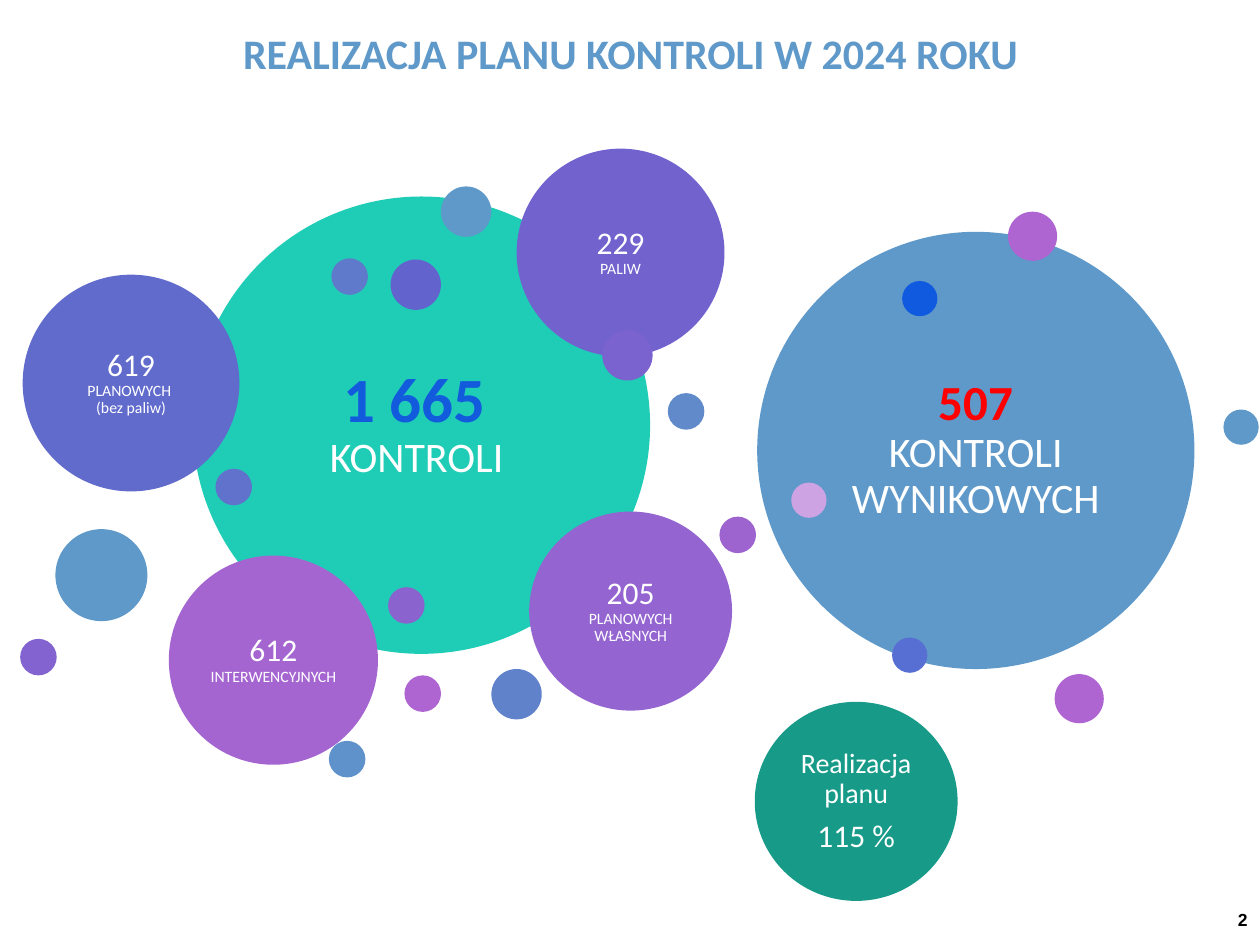
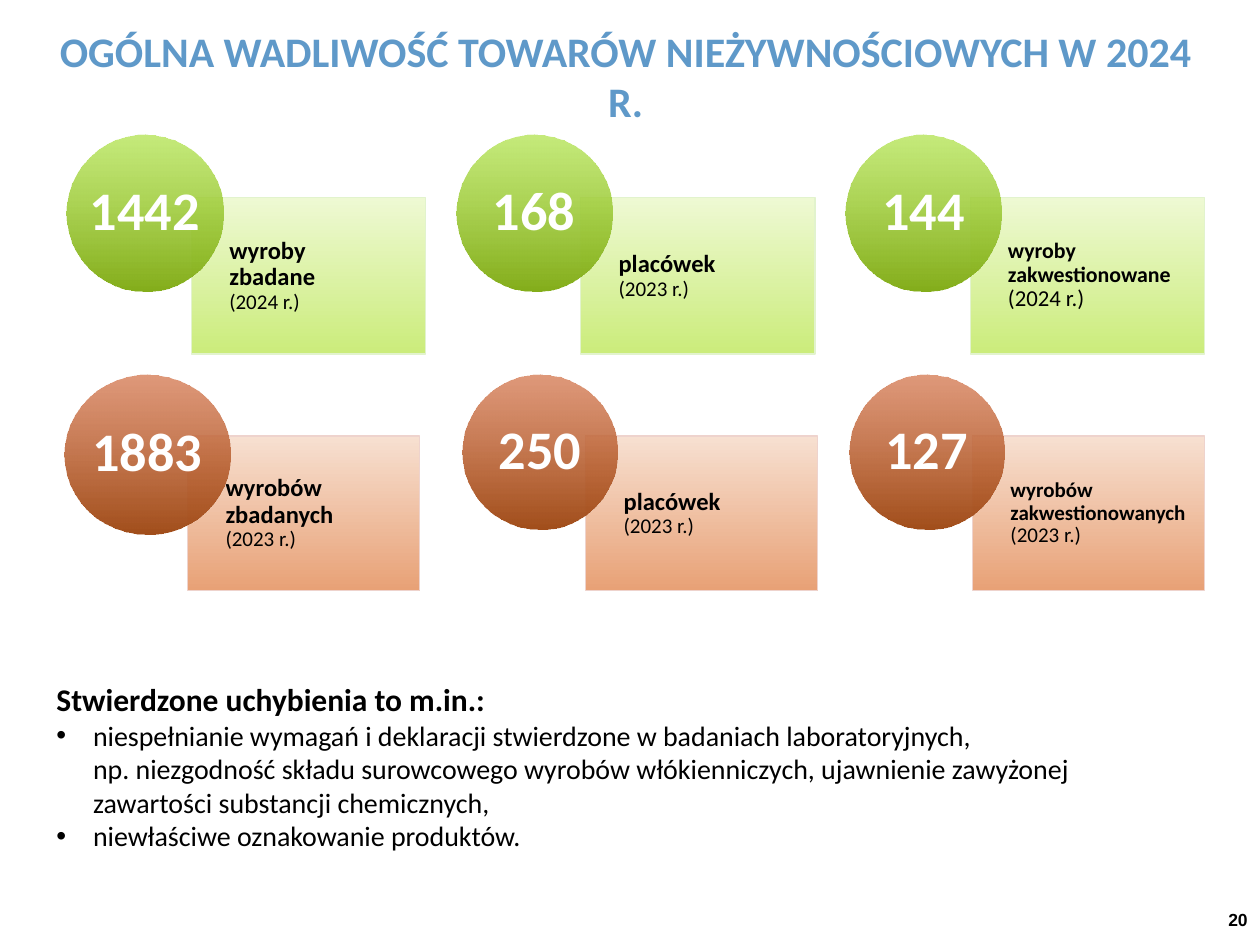
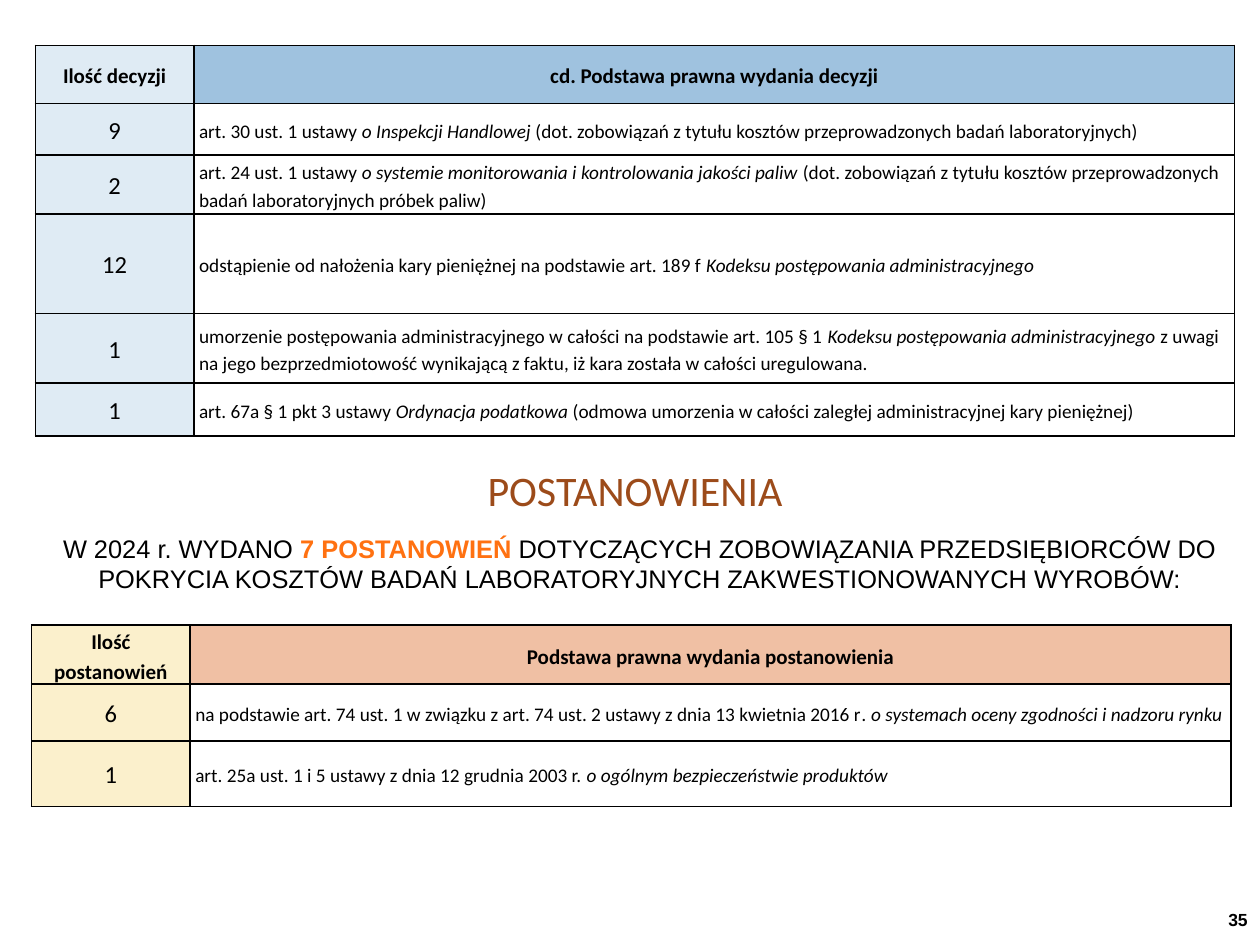
from copy import deepcopy
from dataclasses import dataclass

from lxml import etree
from pptx import Presentation
from pptx import util as u
from pptx.dml.color import RGBColor
from pptx.enum import shapes, text
from pptx.oxml.ns import qn


class Theme:
    font, plain_font = "Calibri", "Arial"
    black, white, red = "000000", "FFFFFF", "FF0000"
    blue, royal, teal, green = "5F99C9", "135BDD", "1FCDB6", "179A88"
    rust, orange, pink = "9C4B1A", "FF7111", "AE65D1"
    lime = dict(card=("EEF9D3", "CBEC7B"), line="E2F3CD", badge=("B2E34F", "84AE1B"))
    copper = dict(card=("F7E0D1", "E8A176"), line="EED3CD", badge=("D4774E", "A24E1B"))
    sky = dict(count="DFEBF4", head="9FC2DF")
    sand = dict(count="FBF0CC", head="F0C0A4")
    title, badge, big, medium = 24, 31, 36, 28
    heading, body, lead, count = 18, 16, 14.5, 14
    head, cell, page, small = 12, 11, 10, 9


@dataclass
class Run:
    text: str
    size: float
    color: str = Theme.black
    bold: bool = False
    italic: bool = False
    font: str = Theme.font


LEFT, CENTER, RIGHT, JUSTIFY = (text.PP_ALIGN.LEFT, text.PP_ALIGN.CENTER,
                                text.PP_ALIGN.RIGHT, text.PP_ALIGN.JUSTIFY)
MIDDLE = text.MSO_ANCHOR.MIDDLE


# ---- Content ----

def figure(number, label):
    return [[Run(number + "\n", Theme.heading, Theme.white),
             Run(label, Theme.small, Theme.white)]]


PLAN_TITLE = "REALIZACJA PLANU KONTROLI W 2024 ROKU"

# left, top, width, height, colour, paragraphs, inset
BIG_CIRCLES = {
    "realised": (5.99, 5.57, 1.61, 1.58, Theme.green,
                 [[Run("Realizacja planu", Theme.body, Theme.white)],
                  [Run("115 %", Theme.heading, Theme.white)]], 0.07),
    "inspections": (1.53, 1.56, 3.63, 3.63, Theme.teal,
                    [[Run("1 665 \n", Theme.big, Theme.royal, True),
                      Run("KONTROLI ", Theme.title, Theme.white)]], 0.15),
    "planned": (0.18, 2.18, 1.72, 1.72, "616BCC",
                figure("619", "PLANOWYCH \n(bez paliw)"), 0.07),
    "fuel": (4.1, 1.18, 1.65, 1.65, "7162CE", figure("229", "PALIW"), 0.07),
    "own": (4.2, 4.06, 1.61, 1.58, "9464D0",
            figure("205", "PLANOWYCH WŁASNYCH"), 0.07),
    "intervention": (1.34, 4.41, 1.66, 1.66, "A565D1",
                     figure("612", "INTERWENCYJNYCH"), 0.07),
    "follow_up": (6.01, 1.84, 3.47, 3.47, Theme.blue,
                  [[Run("507\n", Theme.medium, Theme.red, True),
                    Run("KONTROLI WYNIKOWYCH", Theme.title, Theme.white)]], 0.1),
}

# left, top, diameter, colour
DOTS = [
    (3.5, 1.48, 0.4, Theme.blue), (2.61, 5.88, 0.29, "5F91CA"),
    (5.3, 3.12, 0.29, "608ACA"), (3.9, 5.31, 0.4, "6082CB"),
    (2.63, 2.05, 0.29, "607ACB"), (1.71, 3.72, 0.29, "6172CC"),
    (3.1, 2.06, 0.4, "6263CD"), (0.44, 4.2, 0.73, Theme.blue),
    (4.78, 2.62, 0.4, "7A63CE"), (0.16, 5.07, 0.29, "8363CF"),
    (3.08, 4.66, 0.29, "8B63CF"), (5.71, 4.1, 0.29, "9D64D0"),
    (3.21, 5.36, 0.29, Theme.pink), (8, 1.68, 0.39, Theme.pink),
    (7.08, 5.06, 0.28, "576ED2"), (9.71, 3.25, 0.28, Theme.blue),
    (8.37, 5.35, 0.39, Theme.pink), (7.16, 2.23, 0.28, "105AE0"),
    (6.28, 3.83, 0.28, "CEA3E3"),
]

DEFECT_TITLE = "OGÓLNA WADLIWOŚĆ TOWARÓW NIEŻYWNOŚCIOWYCH W 2024 R."

# badge left, badge size, number, label, label size, note, note size
CARD_ROWS = [
    (1.07, 1.24, Theme.lime, [
        (0.53, (1.24, 1.24), "1442", "wyroby\nzbadane", 14, "(2024 r.)", 12),
        (3.62, (1.24, 1.24), "168", "placówek", 14, "(2023 r.)", 12),
        (6.71, (1.24, 1.24), "144", "wyroby zakwestionowane", 12.5, "(2024 r.)", 13)]),
    (2.97, 1.23, Theme.copper, [
        (0.51, (1.32, 1.27), "1883", "wyrobów\nzbadanych", 14, "(2023 r.)", 12),
        (3.67, (1.23, 1.23), "250", "placówek", 14, "(2023 r.)", 12),
        (6.74, (1.23, 1.23), "127", "wyrobów zakwestionowanych", 12, "(2023 r.)", 12)]),
]

FAULTS_HEAD = "Stwierdzone uchybienia to m.in.:"
FAULTS = [
    "niespełnianie wymagań i deklaracji stwierdzone w badaniach laboratoryjnych, \n"
    "np. niezgodność składu surowcowego wyrobów włókienniczych, ujawnienie "
    "zawyżonej zawartości substancji chemicznych,",
    "niewłaściwe oznakowanie produktów.",
]

# Row height, count, legal basis: every second part is italic
DECISIONS_HEAD = (0.46, "Ilość decyzji", "cd. Podstawa prawna wydania decyzji")
DECISIONS = [
    (0.41, "9", ["art. 30 ust. 1 ustawy ", "o Inspekcji Handlowej ",
                 "(dot. zobowiązań z tytułu kosztów przeprowadzonych badań "
                 "laboratoryjnych)"]),
    (0.47, "2", ["art. 24 ust. 1 ustawy ",
                 "o systemie monitorowania i kontrolowania jakości paliw ",
                 "(dot. zobowiązań z tytułu kosztów przeprowadzonych badań "
                 "laboratoryjnych próbek paliw)"]),
    (0.79, "12", ["odstąpienie od nałożenia kary pieniężnej na podstawie art. 189 f ",
                  "Kodeksu postępowania administracyjnego"]),
    (0.55, "1", ["umorzenie postępowania administracyjnego w całości na podstawie "
                 "art. 105 § 1 ", "Kodeksu postępowania administracyjnego ",
                 "z uwagi na jego bezprzedmiotowość wynikającą z faktu, iż kara "
                 "została w całości uregulowana."]),
    (0.42, "1", ["art. 67a § 1 pkt 3 ustawy ", "Ordynacja podatkowa ",
                 "(odmowa umorzenia w całości zaległej administracyjnej kary "
                 "pieniężnej)"]),
]

RULINGS_TITLE = "POSTANOWIENIA"
RULINGS_LEAD = [
    Run("W 2024 r. WYDANO ", Theme.lead, font=Theme.plain_font),
    Run("7 POSTANOWIEŃ ", Theme.lead, Theme.orange, True, font=Theme.plain_font),
    Run("DOTYCZĄCYCH ZOBOWIĄZANIA PRZEDSIĘBIORCÓW DO POKRYCIA KOSZTÓW BADAŃ "
        "LABORATORYJNYCH ZAKWESTIONOWANYCH WYROBÓW:", Theme.lead,
        font=Theme.plain_font),
]
RULINGS_HEAD = (0.47, "Ilość postanowień", "Podstawa prawna wydania postanowienia")
RULINGS = [
    (0.45, "6", ["na podstawie art. 74 ust. 1 w związku z art. 74 ust. 2 ustawy "
                 "z dnia 13 kwietnia 2016 r",
                 ". o systemach oceny zgodności i nadzoru rynku"]),
    (0.52, "1", ["art. 25a ust. 1 i 5 ustawy z dnia 12 grudnia 2003 r. ",
                 "o ogólnym bezpieczeństwie produktów"]),
]


# ---- Text and shape helpers ----

def inches(*values):
    return [u.Inches(round(value, 2)) for value in values]


def rgb(color):
    return RGBColor.from_string(color)


def add_run(para, run):
    """Add a run; a newline becomes a line break of the same size."""
    for index, part in enumerate(run.text.split("\n")):
        if index:
            para.add_line_break()
            para._p[-1].append(deepcopy(span._r.rPr))
        if not part:
            continue
        span = para.add_run()
        span.text = part
        font = span.font
        font.name, font.size, font.color.rgb = run.font, u.Pt(run.size), rgb(run.color)
        font.bold, font.italic = run.bold, run.italic


def write(frame, paragraphs, align=CENTER, spacing=None, gap=0):
    for index, runs in enumerate(paragraphs):
        para = frame.paragraphs[0] if index == 0 else frame.add_paragraph()
        para.alignment = align
        if spacing:
            para.line_spacing = spacing
        if index < len(paragraphs) - 1:
            para.space_after = u.Pt(gap)
        for run in runs:
            add_run(para, run)


def set_margins(target, left, top, right, bottom):
    (target.margin_left, target.margin_top,
     target.margin_right, target.margin_bottom) = inches(left, top, right, bottom)


def add_text(page, place, paragraphs, align=CENTER, anchor=text.MSO_ANCHOR.TOP):
    frame = page.shapes.add_textbox(*inches(*place)).text_frame
    frame.word_wrap = True
    frame.vertical_anchor = anchor
    write(frame, paragraphs, align)
    return frame


def set_alpha(color_node, percent):
    etree.SubElement(color_node, qn("a:alpha"), val=str(percent * 1000))


def add_filled(page, kind, place, colors, paragraphs=(), margins=(0, 0, 0, 0),
               align=CENTER):
    """Add a shape with one colour or a top-to-bottom pair of colours."""
    shape = page.shapes.add_shape(kind, *inches(*place))
    shape.shadow.inherit = False
    shape.line.fill.background()
    if isinstance(colors, str):
        shape.fill.solid()
        shape.fill.fore_color.rgb = rgb(colors)
    else:
        shape.fill.gradient()
        shape.fill.gradient_angle = 270
        for stop, color in zip(shape.fill.gradient_stops, colors):
            stop.color.rgb = rgb(color)
    frame = shape.text_frame
    frame.word_wrap = True
    frame.vertical_anchor = MIDDLE
    set_margins(frame, *margins)
    write(frame, paragraphs, align, 0.9, 6)
    return shape


def add_circle(page, place, colors, paragraphs=(), inset=0):
    return add_filled(page, shapes.MSO_SHAPE.OVAL, place, colors, paragraphs, [inset] * 4)


def add_title(page, place, words, color=Theme.blue, bold=True):
    add_text(page, place, [[Run(words, Theme.title, color, bold)]])


def new_page(deck, number):
    page = deck.slides.add_slide(deck.slide_layouts[6])
    add_text(page, (9.55, 7.1, 0.45, 0.4),
             [[Run(number, Theme.page, bold=True, font=Theme.plain_font)]],
             RIGHT, MIDDLE)
    return page


# ---- Cards, bullets and tables ----

def add_card(page, top, unit, colors, card):
    left, (badge_width, badge_height), number, label, label_size, note, note_size = card
    width = 1.5 * unit
    place = (left + 0.8 * unit, top + 0.4 * unit, width, unit)
    panel = add_filled(page, shapes.MSO_SHAPE.RECTANGLE, place, colors["card"],
                       [[Run(label + "\n", label_size, bold=True), Run(note, note_size)]],
                       (0.16 * width, 0.1, 0.1, 0.1), LEFT)
    panel.line.color.rgb = rgb(colors["line"])
    panel.line.width = u.Pt(0.75)
    badge = add_circle(page, (left, top, badge_width, badge_height), colors["badge"],
                       [[Run(number, Theme.badge, Theme.white, True)]])
    set_alpha(badge._element.spPr.find(".//" + qn("a:srgbClr")), 75)


def add_bullet(para):
    props = para._p.get_or_add_pPr()
    props.set("marL", str(u.Inches(0.29)))
    props.set("indent", str(-u.Inches(0.29)))
    etree.SubElement(props, qn("a:buFont"), typeface=Theme.plain_font)
    etree.SubElement(props, qn("a:buChar"), char="•")


def fill_cell(cell, runs, color=None, align=CENTER, spacing=1.15):
    cell.vertical_anchor = MIDDLE
    set_margins(cell, 0.04, 0.01, 0.04, 0)
    write(cell.text_frame, [runs], align, spacing)
    props = cell._tc.get_or_add_tcPr()
    for side in ("lnL", "lnR", "lnT", "lnB"):
        line = etree.SubElement(props, qn("a:" + side), w=str(u.Pt(1)))
        solid = etree.SubElement(line, qn("a:solidFill"))
        etree.SubElement(solid, qn("a:srgbClr"), val=Theme.black)
    if color:
        cell.fill.solid()
        cell.fill.fore_color.rgb = rgb(color)
    else:
        cell.fill.background()


def add_basis_table(page, left, top, head, rows, colors):
    widths = (1.26, 8.26)
    heights = [head[0]] + [row[0] for row in rows]
    table = page.shapes.add_table(len(heights), 2, *inches(
        left, top, sum(widths), sum(heights))).table
    table.first_row = table.horz_banding = False
    for column, width in zip(table.columns, widths):
        column.width = u.Inches(width)
    for row, height in zip(table.rows, heights):
        row.height = u.Inches(height)
    for index, color in enumerate((colors["count"], colors["head"])):
        fill_cell(table.cell(0, index), [Run(head[index + 1], Theme.head, bold=True)], color)
    for index, (_, count, parts) in enumerate(rows, 1):
        fill_cell(table.cell(index, 0), [Run(count, Theme.count)], colors["count"],
                  spacing=1.07)
        basis = [Run(part, Theme.cell, italic=order % 2 == 1)
                 for order, part in enumerate(parts)]
        fill_cell(table.cell(index, 1), basis, align=LEFT)


# ---- Slides ----

def build_plan(deck):
    page = new_page(deck, "2")
    add_title(page, (0.28, 0.17, 9.45, 0.5), PLAN_TITLE)
    for *place, color, paragraphs, inset in BIG_CIRCLES.values():
        add_circle(page, place, color, paragraphs, inset)
    for left, top, size, color in DOTS:
        add_circle(page, (left, top, size, size), color)


def build_defects(deck):
    page = new_page(deck, "20")
    add_title(page, (0.2, 0.15, 9.53, 0.5), DEFECT_TITLE)
    for top, unit, colors, cards in CARD_ROWS:
        for card in cards:
            add_card(page, top, unit, colors, card)
    frame = add_text(page, (0.35, 5.2, 8.74, 1.63),
                     [[Run(FAULTS_HEAD, Theme.heading, bold=True)]], JUSTIFY)
    frame.paragraphs[0].line_spacing = 1.5
    for fault in FAULTS:
        para = frame.add_paragraph()
        add_bullet(para)
        add_run(para, Run(fault, Theme.body))


def build_decisions(deck):
    page = new_page(deck, "35")
    add_basis_table(page, 0.28, 0.36, DECISIONS_HEAD, DECISIONS, Theme.sky)
    add_title(page, (0.51, 3.64, 9.06, 0.5), RULINGS_TITLE, Theme.rust, False)
    add_text(page, (0.35, 4.18, 9.45, 0.59), [RULINGS_LEAD])
    add_basis_table(page, 0.25, 4.96, RULINGS_HEAD, RULINGS, Theme.sand)


def main():
    deck = Presentation()
    deck.slide_width, deck.slide_height = inches(10, 7.5)
    for build in (build_plan, build_defects, build_decisions):
        build(deck)
    deck.save("out.pptx")


if __name__ == "__main__":
    main()
